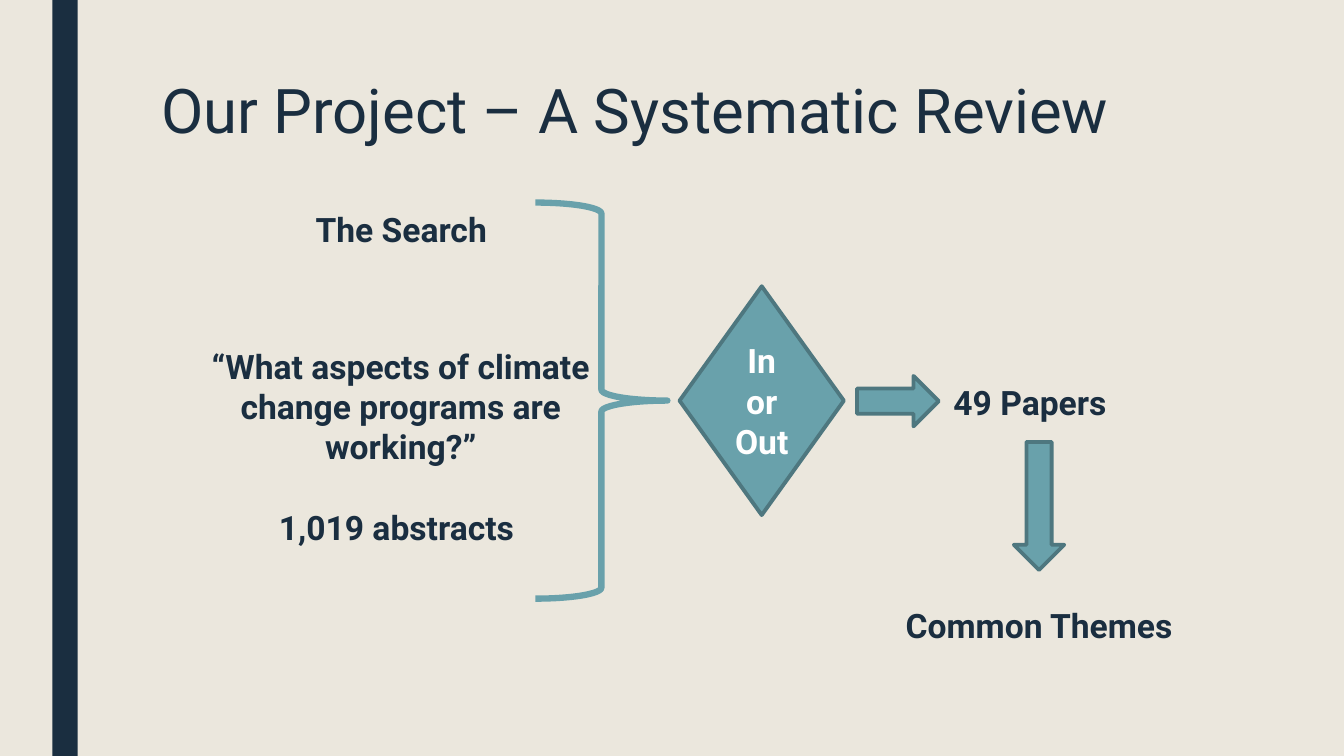
from pptx import Presentation
from pptx.dml.color import RGBColor
from pptx.enum.shapes import MSO_SHAPE
from pptx.enum.text import MSO_ANCHOR, PP_ALIGN
from pptx.util import Inches, Pt

RECTANGLE = MSO_SHAPE.RECTANGLE
ARROW = MSO_SHAPE.RIGHT_ARROW
BRACE = MSO_SHAPE.RIGHT_BRACE
DIAMOND = MSO_SHAPE.DIAMOND
TOP, MIDDLE = MSO_ANCHOR.TOP, MSO_ANCHOR.MIDDLE
LEFT, CENTER = PP_ALIGN.LEFT, PP_ALIGN.CENTER

NAVY, TEAL, DARK_TEAL = "1A2E40", "69A1AB", "4E777F"
CREAM, WHITE = "EBE7DD", "FFFFFF"


def color(value):
    return RGBColor.from_string(value)


class ReviewSlide:
    font = "Roboto"

    def __init__(self, deck):
        self.slide = deck.slides.add_slide(deck.slide_layouts[6])
        background = self.slide.background.fill
        background.solid()
        background.fore_color.rgb = color(CREAM)

    def set_text(self, frame, paragraphs, ink=NAVY, size=24, bold=True,
                 align=CENTER, anchor=TOP, **spacing):
        frame.word_wrap = True
        frame.vertical_anchor = anchor
        for index, words in enumerate(paragraphs):
            paragraph = frame.add_paragraph() if index else frame.paragraphs[0]
            paragraph.alignment = align
            for name, value in spacing.items():
                setattr(paragraph, name, value)
            run = paragraph.add_run()
            run.text = words
            style = {"name": self.font, "size": Pt(size), "bold": bold}
            for name, value in style.items():
                setattr(run.font, name, value)
            run.font.color.rgb = color(ink)

    def text(self, box, *paragraphs, **style):
        label = self.slide.shapes.add_textbox(*map(Inches, box))
        self.set_text(label.text_frame, paragraphs, **style)

    def shape(self, kind, box, fill=TEAL, line=DARK_TEAL, weight=2.75, rotation=0):
        figure = self.slide.shapes.add_shape(kind, *map(Inches, box))
        figure.shadow.inherit = False
        figure.rotation = rotation
        if fill:
            figure.fill.solid()
            figure.fill.fore_color.rgb = color(fill)
        else:
            figure.fill.background()
        if line:
            figure.line.color.rgb = color(line)
            figure.line.width = Pt(weight)
        else:
            figure.line.fill.background()
        return figure


def main():
    deck = Presentation()
    deck.slide_width, deck.slide_height = Inches(13.33), Inches(7.5)
    review = ReviewSlide(deck)

    review.shape(RECTANGLE, (0.52, 0, 0.25, 7.5), fill=NAVY, line=None)
    review.text((1.5, 0.75, 10.5, 1.62), "Our Project – A Systematic Review",
                size=44, bold=False, align=LEFT, line_spacing=0.89)

    review.text((2.16, 2.02, 3.64, 0.5), "The Search")
    review.text((1.71, 3.38, 4.53, 2.12),
                "“What aspects of climate change programs are working?”",
                "1,019 abstracts ", space_after=Pt(28.8))

    review.shape(ARROW, (8.5, 3.73, 0.81, 0.5))
    review.text((8.52, 3.74, 3.39, 0.5), "49 Papers")
    review.shape(ARROW, (9.67, 4.77, 1.27, 0.5), rotation=90)
    review.text((8.61, 5.95, 3.39, 0.5), "Common Themes")

    review.shape(BRACE, (5.31, 2.01, 1.31, 3.93), fill=None, line=TEAL, weight=4.5)
    decision = review.shape(DIAMOND, (6.74, 2.84, 1.63, 2.27))
    review.set_text(decision.text_frame, ["In or Out"], ink=WHITE, anchor=MIDDLE)

    deck.save("out.pptx")


if __name__ == "__main__":
    main()
